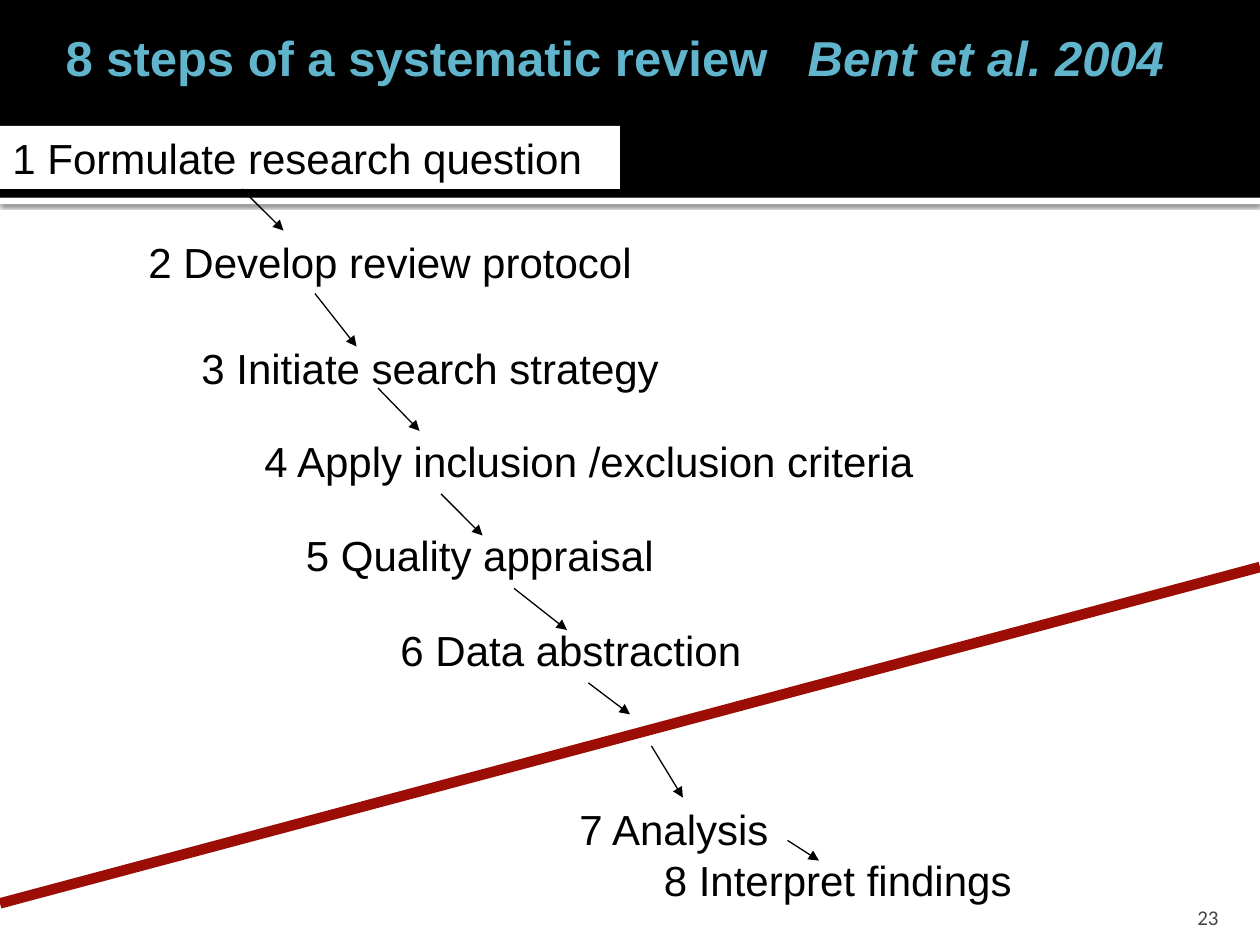
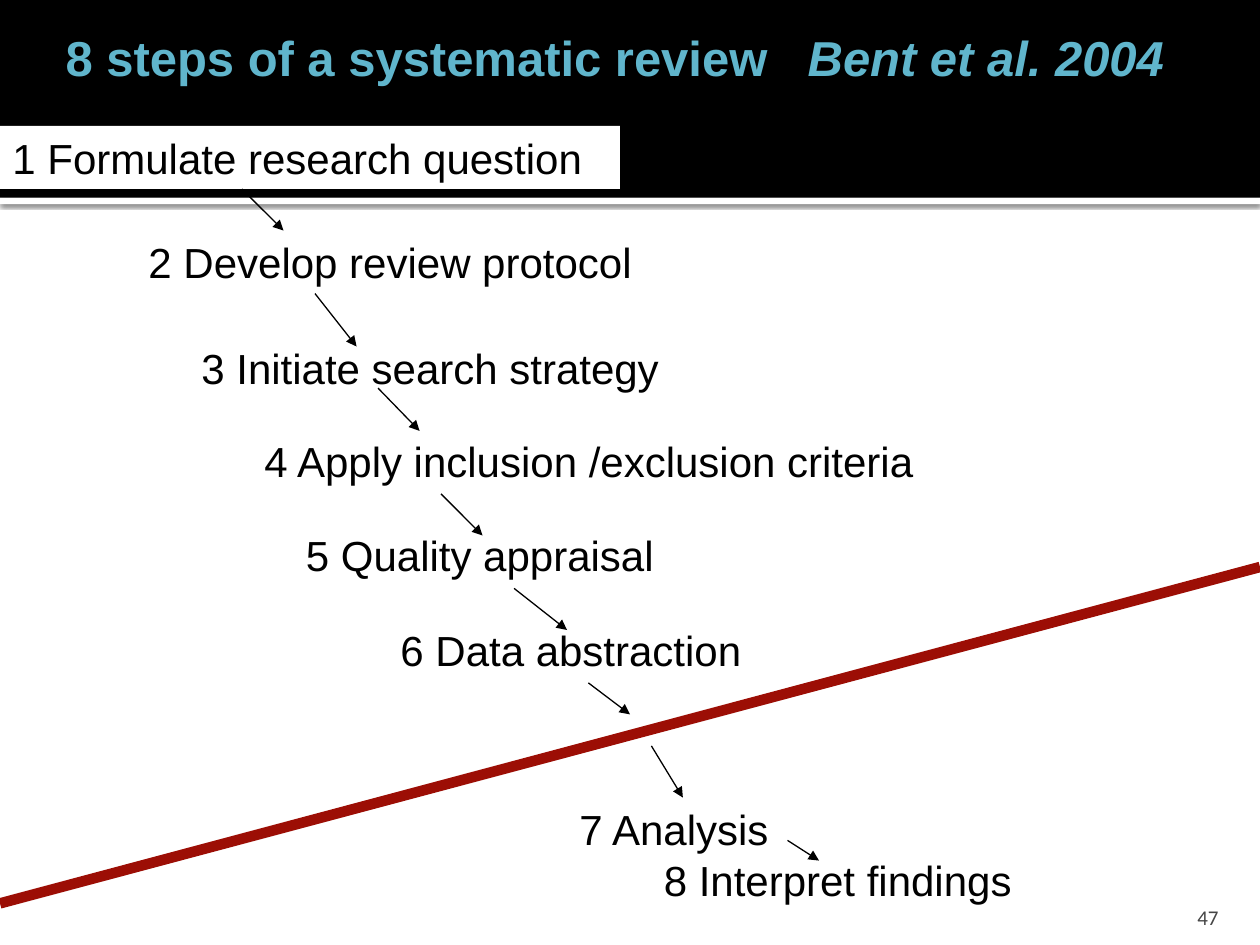
from lxml import etree
from pptx import Presentation
from pptx import util as u
from pptx.dml.color import RGBColor
from pptx.enum import shapes, text
from pptx.oxml import parse_xml
from pptx.oxml.ns import nsdecls, qn

BLACK = RGBColor(0x00, 0x00, 0x00)
WHITE = RGBColor(0xFF, 0xFF, 0xFF)
TITLE_BLUE = RGBColor(0x60, 0xB5, 0xCC)
DIVIDER_RED = RGBColor(0x9C, 0x0E, 0x05)
NUMBER_GREY = RGBColor(0x45, 0x45, 0x45)

STEP_FONT = {"name": "Arial", "size": u.Pt(24)}
TITLE_FONT = {"name": "Arial", "size": u.Pt(28), "bold": True}
NUMBER_FONT = {"name": "Calibri", "size": u.Pt(12)}

PAGE_NUMBERS = ["23", "47"]
BANDS = [(1.57, 0.05, WHITE), (0, 1.57, BLACK)]
STEPS = [
    ("1 Formulate research question", 0, 1, 4.92, 0.5, 1),
    ("2 Develop review protocol", 1.08, 1.83, 4.25, 0.5, 1),
    ("3 Initiate search strategy", 1.5, 2.67, 3.92, 0.5, 1),
    ("4 Apply inclusion /exclusion criteria", 2, 3.5, 5.42, 0.4, 0.75),
    ("5 Quality appraisal", 2.33, 4.25, 3.17, 0.4, 0.75),
    ("6 Data abstraction", 3.08, 5, 3.33, 0.4, 0.75),
    ("7 Analysis", 4.5, 6.42, 1.75, 0.4, 0.75),
    ("8 Interpret findings", 5.17, 6.83, 3.42, 0.4, 0.75),
]
ARROWS = [
    (1.92, 1.5, 2.25, 1.83),
    (2.5, 2.33, 2.83, 2.75),
    (3, 3.08, 3.33, 3.42),
    (3.5, 3.92, 3.83, 4.25),
    (4.08, 4.67, 4.5, 5),
    (4.67, 5.42, 5, 5.67),
    (5.17, 5.92, 5.42, 6.33),
    (6.25, 6.67, 6.5, 6.83),
]
DIVIDER = (0, 7.17, 10, 4.5)


def add_run(p, words, color, fmt):
    r = p.add_run()
    r.text = words
    for key, value in fmt.items():
        setattr(r.font, key, value)
    r.font.color.rgb = color


def add_line(s, ends, color, width):
    c = s.shapes.add_connector(shapes.MSO_CONNECTOR.STRAIGHT, *map(u.Inches, ends))
    c.line.color.rgb = color
    c.line.width = u.Pt(width)
    etree.SubElement(c.element.spPr, qn("a:effectLst"))
    return c


prs = Presentation()
prs.slide_width, prs.slide_height = u.Inches(10), u.Inches(7.5)
layout = prs.slide_layouts[5]
for ph in list(layout.placeholders)[1:]:
    ph.element.getparent().remove(ph.element)

slides = [prs.slides.add_slide(layout) for _ in PAGE_NUMBERS]

for i, (top, height, color) in enumerate(BANDS):
    sp = slides[0].shapes.add_shape(
        shapes.MSO_SHAPE.RECTANGLE, 0, u.Inches(top), prs.slide_width, u.Inches(height))
    sp.fill.solid()
    sp.fill.fore_color.rgb = color
    sp.line.fill.background()
    sp.shadow.inherit = False
    if color == WHITE:
        sp.element.spPr.find(qn("a:effectLst")).append(parse_xml(
            f'<a:outerShdw {nsdecls("a")} blurRad="31750" dist="10160" dir="5400000">'
            '<a:srgbClr val="000000"><a:alpha val="60000"/></a:srgbClr></a:outerShdw>'))
    layout.shapes.element.insert(2 + i, sp.element)

for s, number in zip(slides, PAGE_NUMBERS):
    title = s.shapes.title
    title.left, title.top, title.width, title.height = map(u.Inches, (0.42, 0.17, 9.17, 0.57))
    tf = title.text_frame
    tf.vertical_anchor = text.MSO_ANCHOR.TOP
    tf.auto_size = text.MSO_AUTO_SIZE.SHAPE_TO_FIT_TEXT
    p = tf.paragraphs[0]
    p.alignment = text.PP_ALIGN.LEFT
    tabs = etree.SubElement(p._p.get_or_add_pPr(), qn("a:tabLst"))
    etree.SubElement(tabs, qn("a:tab"), pos=str(u.Inches(5.89)), algn="l")
    add_run(p, "8 steps of a systematic review\t", TITLE_BLUE, TITLE_FONT)
    add_run(p, "Bent et al. 2004", TITLE_BLUE, {**TITLE_FONT, "italic": True})

    for words, left, top, width, height, spacing in STEPS:
        sp = s.shapes.add_textbox(*map(u.Inches, (left, top, width, height)))
        if left == 0:
            sp.fill.solid()
            sp.fill.fore_color.rgb = WHITE
        tf = sp.text_frame
        tf.word_wrap = True
        tf.auto_size = text.MSO_AUTO_SIZE.SHAPE_TO_FIT_TEXT
        p = tf.paragraphs[0]
        p.line_spacing = spacing
        add_run(p, words, BLACK, STEP_FONT)

    for ends in ARROWS:
        c = add_line(s, ends, BLACK, 0.75)
        etree.SubElement(c.element.spPr.find(qn("a:ln")), qn("a:tailEnd"), type="triangle")
    add_line(s, DIVIDER, DIVIDER_RED, 6)

    sp = s.shapes.add_textbox(*map(u.Inches, (8.97, 7.08, 0.8, 0.3)))
    tf = sp.text_frame
    tf.word_wrap = True
    tf.vertical_anchor = text.MSO_ANCHOR.BOTTOM
    tf.margin_bottom = 0
    p = tf.paragraphs[0]
    p.alignment = text.PP_ALIGN.RIGHT
    add_run(p, number, NUMBER_GREY, NUMBER_FONT)

prs.save("out.pptx")
